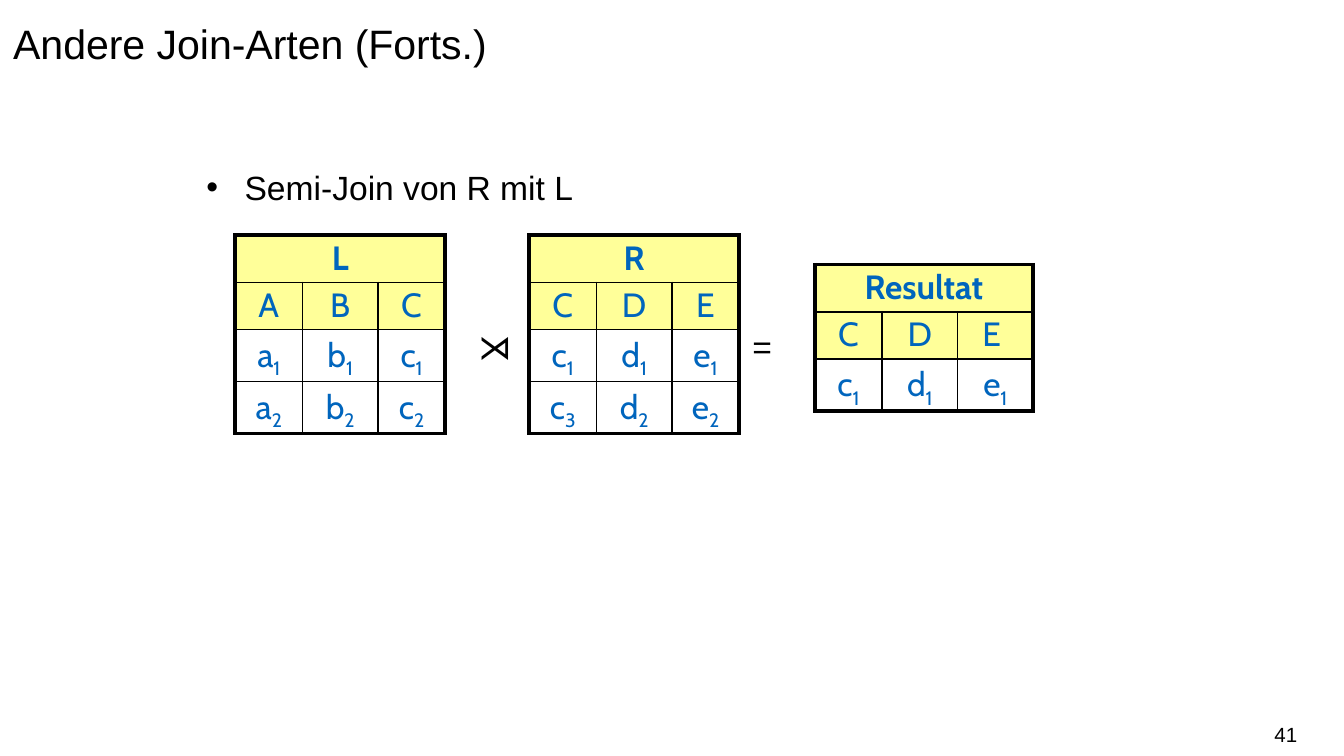
"""Builds a slide that shows the semi-join of R with L as three small tables."""
from lxml import etree
from pptx import Presentation
from pptx.dml.color import RGBColor
from pptx.enum.text import MSO_ANCHOR, PP_ALIGN
from pptx.oxml.ns import qn
from pptx.util import Pt

BLACK = RGBColor(0x00, 0x00, 0x00)
WHITE = RGBColor(0xFF, 0xFF, 0xFF)
BLUE = RGBColor(0x00, 0x65, 0xBD)
YELLOW = RGBColor(0xFF, 0xFF, 0x99)
LEFT, CENTER, RIGHT = PP_ALIGN.LEFT, PP_ALIGN.CENTER, PP_ALIGN.RIGHT
TOP, MIDDLE = MSO_ANCHOR.TOP, MSO_ANCHOR.MIDDLE

TITLE = "Andere Join-Arten (Forts.)"
BULLET_TEXT = "Semi-Join von R mit L"
PAGE_NUMBER = "41"
RELATIONS = [
    {"name": "L", "at": (126, 126), "columns": (36, 40.5, 36),
     "header": ("A", "B", "C"), "rows": [("a1", "b1", "c1"), ("a2", "b2", "c2")]},
    {"name": "R", "at": (283.5, 126), "columns": (36, 40.5, 36),
     "header": ("C", "D", "E"), "rows": [("c1", "d1", "e1"), ("c3", "d2", "e2")]},
    {"name": "Resultat", "at": (436.5, 141.75), "columns": (36, 40.5, 40.5),
     "header": ("C", "D", "E "), "rows": [("c1", "d1", "e1")]},
]
OPERATORS = [("⋊", (249, 171, 24, 29)), ("=", (396, 171, 40.5, 29))]
ROW_HEIGHT = 24.75
OUTER_LINE, INNER_LINE = 2.25, 1


def add_span(para, text, size, color, font="Arial", bold=False):
    span = para.add_run()
    span.text = text
    span.font.name = font
    span.font.size = Pt(size)
    span.font.bold = bold
    span.font.color.rgb = color
    return span


def add_text(page, text, place, size=18, align=LEFT, anchor=TOP, inset=7.2, wrap=True):
    frame = page.shapes.add_textbox(*map(Pt, place)).text_frame
    frame.word_wrap = wrap
    frame.vertical_anchor = anchor
    frame.margin_left = frame.margin_right = Pt(inset)
    para = frame.paragraphs[0]
    para.alignment = align
    add_span(para, text, size, BLACK)
    return para


def add_bullet(para, indent):
    properties = para._p.get_or_add_pPr()
    properties.set("marL", str(Pt(indent)))
    properties.set("indent", str(-Pt(indent)))
    etree.SubElement(properties, qn("a:buFont"), typeface="Arial")
    etree.SubElement(properties, qn("a:buChar"), char="•")


def set_borders(cell, widths):
    properties = cell._tc.get_or_add_tcPr()
    for position, (side, width) in enumerate(widths.items()):
        line = etree.Element(qn(f"a:ln{side}"), w=str(Pt(width)))
        fill = etree.SubElement(line, qn("a:solidFill"))
        etree.SubElement(fill, qn("a:srgbClr"), val=str(BLACK))
        properties.insert(position, line)


def fill_cell(cell, text, is_name, is_value):
    cell.margin_left = cell.margin_right = 0
    cell.margin_top = cell.margin_bottom = Pt(2.9)
    para = cell.text_frame.paragraphs[0]
    para.alignment = CENTER
    para.line_spacing = 0.9
    letters, index = (text[:-1], text[-1]) if is_value else (text, "")
    add_span(para, letters, 18, BLUE, "Cabin", is_name)
    if index:
        subscript = add_span(para, index, 18, BLUE, "Cabin")
        subscript.font._element.set("baseline", "-25000")


def add_relation(page, relation):
    columns = relation["columns"]
    content = [(relation["name"],), relation["header"], *relation["rows"]]
    last_row, last_column = len(content) - 1, len(columns) - 1
    size = (sum(columns), ROW_HEIGHT * len(content))
    table = page.shapes.add_table(
        len(content), len(columns), *map(Pt, relation["at"] + size)).table
    for column, width in zip(table.columns, columns):
        column.width = Pt(width)
    table.cell(0, 0).merge(table.cell(0, last_column))
    for i, texts in enumerate(content):
        table.rows[i].height = Pt(ROW_HEIGHT)
        for j in range(len(columns)):
            cell = table.cell(i, j)
            cell.fill.solid()
            cell.fill.fore_color.rgb = YELLOW if i < 2 else WHITE
            on_edge = {"L": j == 0 or i == 0, "R": j == last_column or i == 0,
                       "T": i == 0, "B": i == last_row}
            set_borders(cell, {side: OUTER_LINE if outer else INNER_LINE
                               for side, outer in on_edge.items()})
            if j < len(texts):
                fill_cell(cell, texts[j], i == 0, i > 1)


def main():
    deck = Presentation()
    deck.slide_width, deck.slide_height = Pt(720), Pt(405)
    page = deck.slides.add_slide(deck.slide_layouts[6])
    title = add_text(page, TITLE, (0, 0, 720, 67.5), size=22)
    title.line_spacing = 1.25
    for relation in RELATIONS:
        add_relation(page, relation)
    for symbol, place in OPERATORS:
        add_text(page, symbol, place, wrap=False)
    add_bullet(add_text(page, BULLET_TEXT, (103.5, 86, 230, 29)), 20.5)
    add_text(page, PAGE_NUMBER, (533.5, 382.5, 161.5, 21.5), size=11,
             align=RIGHT, anchor=MIDDLE, inset=0)
    deck.save("out.pptx")


if __name__ == "__main__":
    main()
